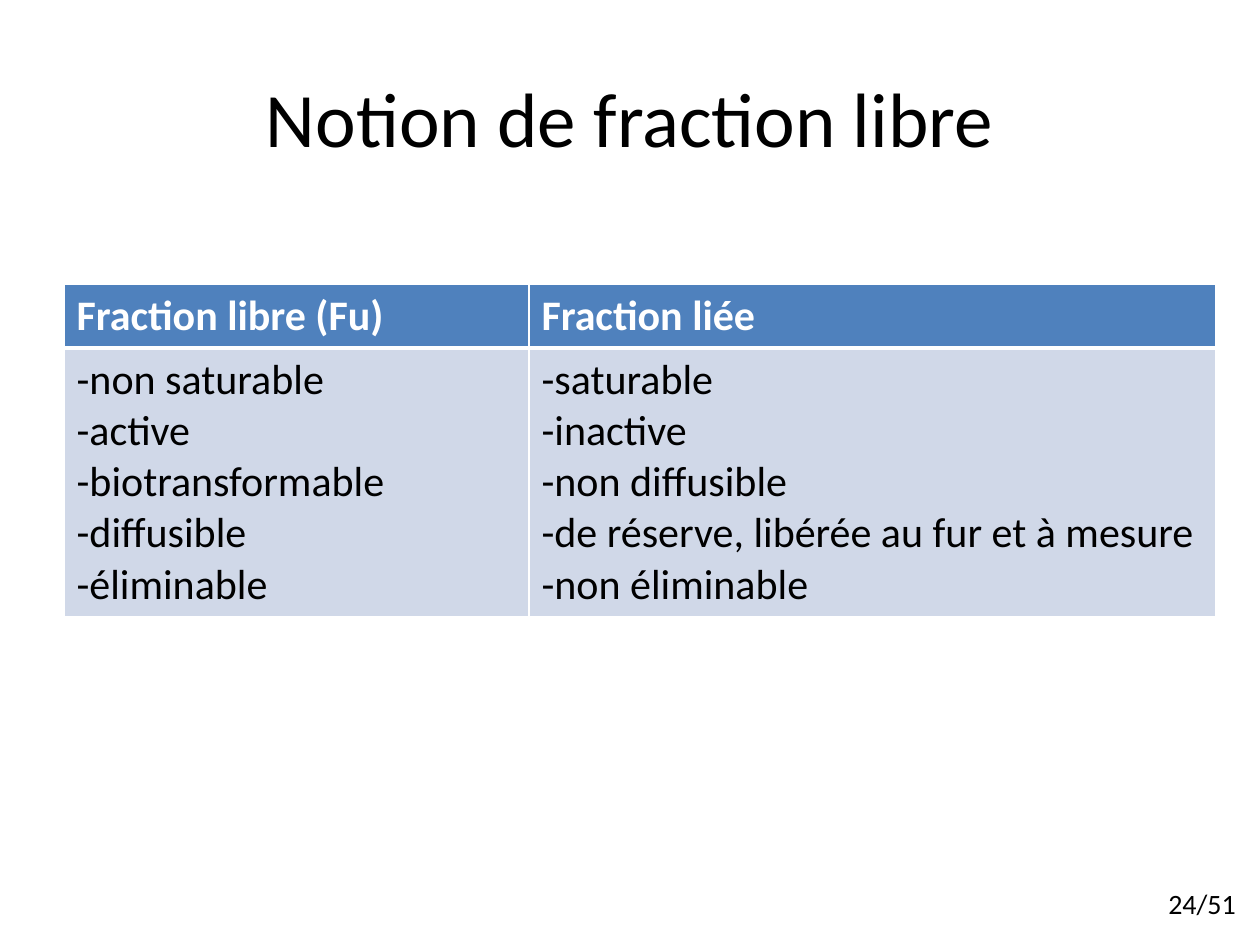
from lxml.etree import SubElement
from pptx import Presentation
from pptx.dml.color import RGBColor
from pptx.enum.text import MSO_ANCHOR, PP_ALIGN
from pptx.oxml.ns import qn
from pptx.util import Pt

PX = 914400 // 126
FONT = "Calibri"
BLACK = RGBColor(0x00, 0x00, 0x00)
WHITE = RGBColor(0xFF, 0xFF, 0xFF)
BLUE = RGBColor(0x4F, 0x81, 0xBD)
PALE = RGBColor(0xD0, 0xD8, 0xE8)

HEADS = ["Fraction libre (Fu)", "Fraction liée"]
TRAITS = [
    "-non saturable\n-active\n-biotransformable\n-diffusible\n-éliminable",
    "-saturable\n-inactive\n-non diffusible\n"
    "-de réserve, libérée au fur et à mesure\n-non éliminable",
]


def px(*sizes):
    return [size * PX for size in sizes]


def style(frame, size, color, align, bold=False):
    for para in frame.paragraphs:
        para.alignment = align
        for run in para.runs:
            font = run.font
            font.name = FONT
            font.size = Pt(size)
            font.bold = bold
            font.color.rgb = color


def place(shape, *box):
    shape.left, shape.top, shape.width, shape.height = px(*box)


def add_title(slide, text):
    title = slide.shapes.title
    place(title, 63, 38, 1134, 157)
    frame = title.text_frame
    frame.text = text
    frame.vertical_anchor = MSO_ANCHOR.MIDDLE
    style(frame, 44, BLACK, PP_ALIGN.CENTER)


def add_edges(cell, **widths):
    props = cell._tc.get_or_add_tcPr()
    for side, width in widths.items():
        line = SubElement(props, qn(f"a:ln{side}"), w=str(Pt(width)))
        fill = SubElement(line, qn("a:solidFill"))
        SubElement(fill, qn("a:srgbClr"), val=str(WHITE))


def fill_cell(cell, text, head):
    cell.text = text
    color = WHITE if head else BLACK
    style(cell.text_frame, 24, color, PP_ALIGN.LEFT, head)
    top, bottom = (1, 3) if head else (3, 1)
    add_edges(cell, L=1, R=1, T=top, B=bottom)
    cell.fill.solid()
    cell.fill.fore_color.rgb = BLUE if head else PALE


def add_grid(slide, rows):
    box = px(64, 284, 1152, 332)
    table = slide.shapes.add_table(len(rows), len(rows[0]), *box).table
    for col, width in zip(table.columns, px(465, 687)):
        col.width = width
    for row, height in zip(table.rows, px(63, 269)):
        row.height = height
    for i, texts in enumerate(rows):
        for j, text in enumerate(texts):
            fill_cell(table.cell(i, j), text, i == 0)


def add_page(slide, text):
    frame = slide.shapes.add_textbox(*px(1156, 880, 99, 47)).text_frame
    frame.word_wrap = True
    frame.text = text
    style(frame, 16, BLACK, PP_ALIGN.JUSTIFY)


def main():
    deck = Presentation()
    deck.slide_width, deck.slide_height = px(1260, 945)
    slide = deck.slides.add_slide(deck.slide_layouts[5])
    add_title(slide, "Notion de fraction libre")
    add_grid(slide, [HEADS, TRAITS])
    add_page(slide, "24/51")
    deck.save("out.pptx")


if __name__ == "__main__":
    main()
